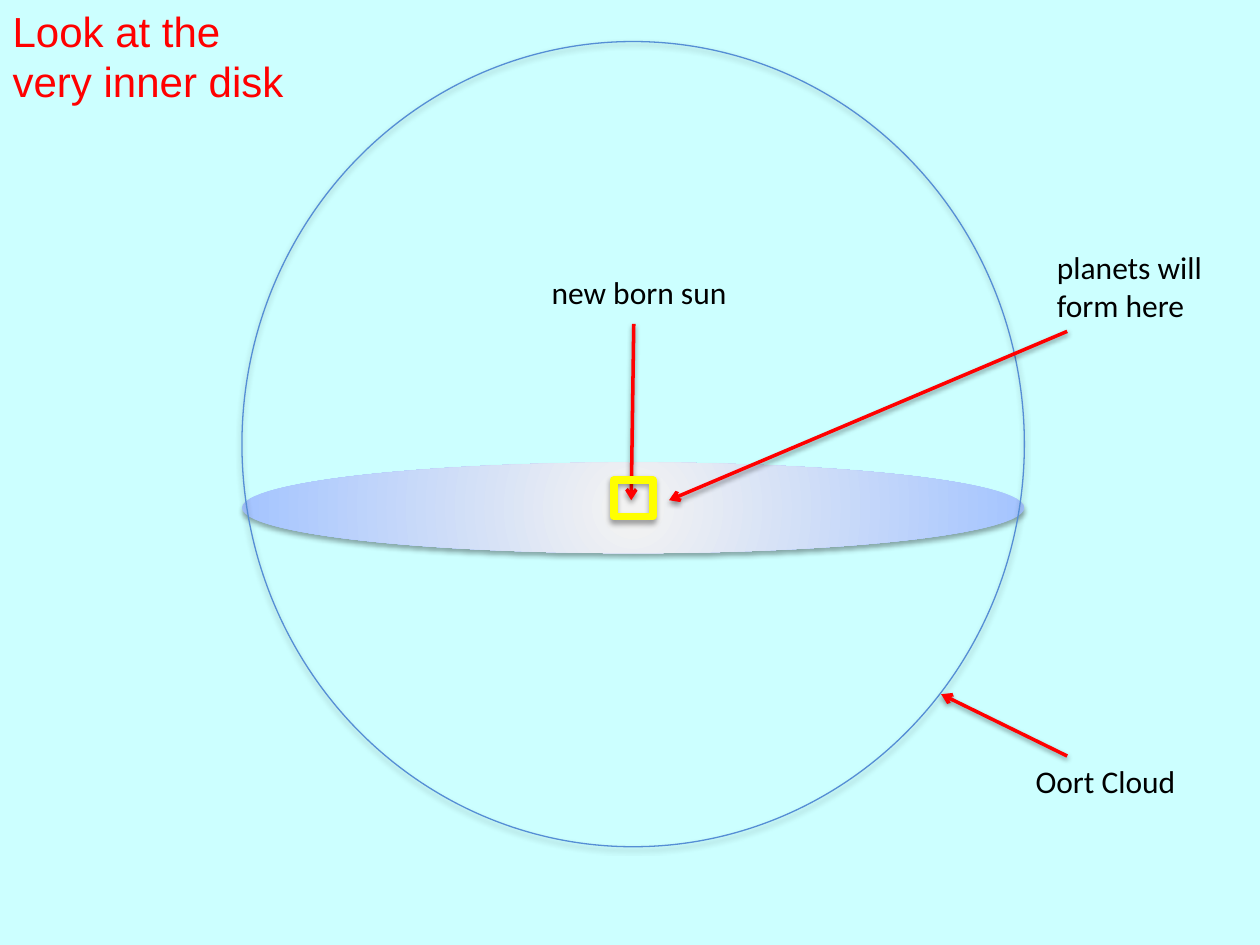
import lxml.etree
import pptx
import pptx.dml.color
import pptx.enum.shapes
import pptx.enum.text
import pptx.oxml
import pptx.oxml.ns
import pptx.util

EMU_PER_PX = 9144

SKY = pptx.dml.color.RGBColor(0xCC, 0xFF, 0xFF)
RED = pptx.dml.color.RGBColor(0xFF, 0x00, 0x00)
BLACK = pptx.dml.color.RGBColor(0x00, 0x00, 0x00)
YELLOW = pptx.dml.color.RGBColor(0xFF, 0xFF, 0x00)
CLOUD_BLUE = pptx.dml.color.RGBColor(0x55, 0x8E, 0xD5)
DISK_CENTER = pptx.dml.color.RGBColor(0xF2, 0xF2, 0xF2)
DISK_EDGE = pptx.dml.color.RGBColor(0xA4, 0xC4, 0xFF)

OVAL = pptx.enum.shapes.MSO_SHAPE.OVAL
RECTANGLE = pptx.enum.shapes.MSO_SHAPE.RECTANGLE


def px(*lengths):
    return [pptx.util.Emu(length * EMU_PER_PX) for length in lengths]


def xml(body):
    tag, rest = body[:-1].split(" ", 1) if " " in body.split(">")[0] else (body.split(">")[0], None)
    namespace = pptx.oxml.ns.nsdecls("a")
    if rest is None:
        return pptx.oxml.parse_xml(body.replace(tag, f"{tag} {namespace}", 1))
    return pptx.oxml.parse_xml(f"{tag} {namespace} {rest}>")


def shadow(blur, distance, angle, opacity):
    return xml(
        f'<a:effectLst><a:outerShdw blurRad="{pptx.util.Pt(blur)}" '
        f'dist="{pptx.util.Pt(distance)}" dir="{angle * 60000}" rotWithShape="0">'
        f'<a:srgbClr val="000000"><a:alpha val="{opacity * 1000}"/></a:srgbClr>'
        "</a:outerShdw></a:effectLst>"
    )


def write(text_frame, text, *, size, font, color, wrap=True):
    text_frame.word_wrap = wrap
    text_frame.auto_size = pptx.enum.text.MSO_AUTO_SIZE.SHAPE_TO_FIT_TEXT
    text_frame.vertical_anchor = pptx.enum.text.MSO_ANCHOR.TOP
    text_frame.text = text
    for paragraph in text_frame.paragraphs:
        paragraph.alignment = pptx.enum.text.PP_ALIGN.LEFT
        for run in paragraph.runs:
            run.font.size = pptx.util.Pt(size)
            run.font.name = font
            run.font.color.rgb = color


class DiskSlide:
    title_style = {"size": 24, "font": "Arial", "color": RED}
    label_style = {"size": 18, "font": "Calibri", "color": BLACK, "wrap": False}
    arrow_width = 2

    def __init__(self, presentation):
        self.slide = presentation.slides.add_slide(presentation.slide_layouts[5])
        self.slide.background.fill.solid()
        self.slide.background.fill.fore_color.rgb = SKY

    def title(self, text, left, top, width, height):
        title = self.slide.shapes.title
        title.left, title.top, title.width, title.height = px(left, top, width, height)
        write(title.text_frame, text, **self.title_style)
        properties = title.text_frame.paragraphs[0].runs[0].font.fill
        run_properties = title.text_frame.paragraphs[0].runs[0]._r.rPr
        solid_fill = run_properties.find(pptx.oxml.ns.qn("a:solidFill"))
        solid_fill.addnext(shadow(3, 3, 45, 43))

    def label(self, text, left, top, width, height):
        box = self.slide.shapes.add_textbox(*px(left, top, width, height))
        write(box.text_frame, text, **self.label_style)

    def shape(self, kind, left, top, width, height, *, gradient=None, line=None, weight=0):
        shape = self.slide.shapes.add_shape(kind, *px(left, top, width, height))
        if gradient:
            self.radial_fill(shape, gradient)
        else:
            shape.fill.background()
        if line:
            shape.line.color.rgb = line
            shape.line.width = pptx.util.Pt(weight)
        else:
            shape.line.fill.background()
        shape._element.spPr.append(shadow(3.1, 1.8, 90, 35))

    def radial_fill(self, shape, gradient):
        shape.fill.gradient()
        for stop, (position, color) in zip(shape.fill.gradient_stops, gradient):
            stop.position = position
            stop.color.rgb = color
        gradient_fill = shape._element.spPr.find(pptx.oxml.ns.qn("a:gradFill"))
        linear = gradient_fill.find(pptx.oxml.ns.qn("a:lin"))
        gradient_fill.replace(linear, xml(
            '<a:path path="circle">'
            '<a:fillToRect l="50000" t="50000" r="50000" b="50000"/></a:path>'
        ))

    def arrow(self, start, end):
        straight = pptx.enum.shapes.MSO_CONNECTOR.STRAIGHT
        arrow = self.slide.shapes.add_connector(straight, *px(*start, *end))
        arrow.line.color.rgb = RED
        arrow.line.width = pptx.util.Pt(self.arrow_width)
        properties = arrow._element.spPr
        line = properties.find(pptx.oxml.ns.qn("a:ln"))
        lxml.etree.SubElement(line, pptx.oxml.ns.qn("a:tailEnd"), type="arrow")
        properties.append(shadow(3.1, 1.6, 90, 38))


def main():
    presentation = pptx.Presentation()
    presentation.slide_width, presentation.slide_height = px(1000, 750)

    page = DiskSlide(presentation)
    page.title("Look at the very inner disk", 0, -1, 242, 91)
    page.shape(OVAL, 192, 367, 621, 72, gradient=[(0.03, DISK_CENTER), (1, DISK_EDGE)])
    page.shape(OVAL, 192, 33, 621, 639, line=CLOUD_BLUE, weight=0.75)
    page.arrow((503, 257), (501, 397))
    page.label("new born sun", 428, 212, 160, 40)
    page.arrow((847, 600), (747, 551))
    page.label("Oort Cloud", 812, 600, 132, 40)
    page.label("planets will\nform here", 829, 192, 136, 71)
    page.shape(RECTANGLE, 487, 381, 31, 29, line=YELLOW, weight=4.5)
    page.arrow((847, 263), (531, 397))

    presentation.save("out.pptx")


if __name__ == "__main__":
    main()
